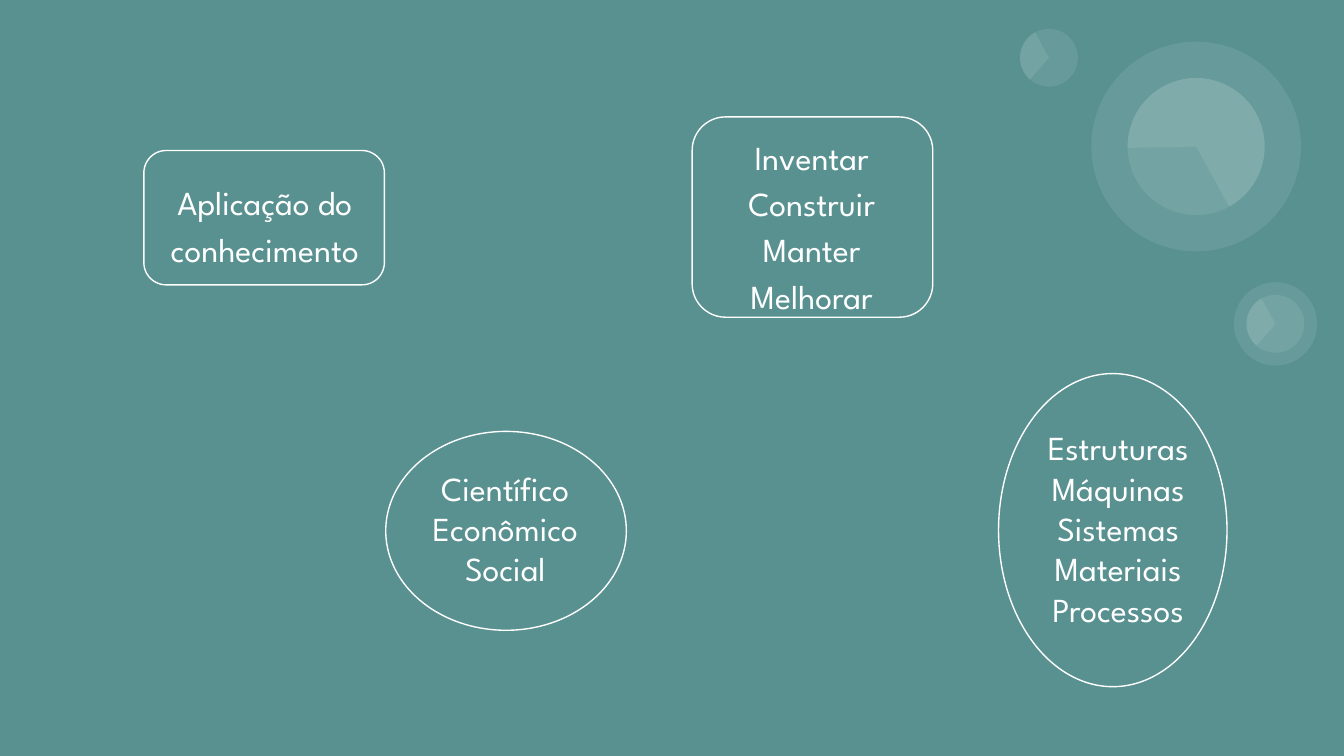
"""Build a slide of outlined word groups with translucent circles in the corner."""
from lxml import etree
from pptx import Presentation, util as u
from pptx.dml.color import RGBColor
from pptx.enum import shapes, text
from pptx.oxml.ns import qn

TEAL = RGBColor(0x59, 0x91, 0x91)
WHITE = RGBColor(0xFF, 0xFF, 0xFF)
FONT = "League Spartan"
CELL = u.Inches(0.1)
COLUMNS, ROWS = 100, 56.25
OVAL = shapes.MSO_SHAPE.OVAL
PIE = shapes.MSO_SHAPE.PIE
ROUNDED = shapes.MSO_SHAPE.ROUNDED_RECTANGLE

OUTLINES = [
    (OVAL, 74.3, 27.8, 17, 23.3),
    (ROUNDED, 51.5, 8.7, 17.9, 14.9),
    (OVAL, 28.7, 32.1, 17.9, 14.8),
    (ROUNDED, 10.7, 11.2, 17.9, 10),
]
WORD_GROUPS = [
    (8.3, 12.1, ["Aplicação do conhecimento"], {"line_spacing": 1.15, "space_after": 16}),
    (26.2, 33.8, ["Científico", "Econômico", "Social"], {}),
    (49, 8.7, ["Inventar", "Construir", "Manter", "Melhorar"], {"line_spacing": 1.15}),
    (71.8, 30.8, ["Estruturas Máquinas", "Sistemas", "Materiais", "Processos"], {}),
]
DIALS = [
    (89, 10.9, 10.2, 15.6, 215.9, (193.77, 123.14)),
    (94.9, 24.1, 4.3, 6.2, 35.8, (57, 123.14)),
    (78.05, 4.3, 4.3, None, 35.8, (57, 123.14)),
]


def grid(*cells):
    """Turn grid columns and rows into slide lengths."""
    return [round(cell * CELL) for cell in cells]


def add_outline(slide, kind, *box):
    """Add an unfilled shape with a thin white line."""
    shape = slide.shapes.add_shape(kind, *grid(*box))
    shape.shadow.inherit = False
    shape.fill.background()
    shape.line.color.rgb = WHITE
    shape.line.width = u.Pt(0.75)


def add_glow(slide, kind, x, y, diameter, rotation, angles=()):
    """Add a translucent white round shape centred on a grid point."""
    corner = x - diameter / 2, y - diameter / 2
    shape = slide.shapes.add_shape(kind, *grid(*corner, diameter, diameter))
    shape.shadow.inherit = False
    shape.rotation = rotation
    for index, angle in enumerate(angles):
        shape.adjustments[index] = angle
    shape.line.fill.background()
    shape.fill.solid()
    shape.fill.fore_color.rgb = WHITE
    color = shape.fill._xPr.find(".//" + qn("a:srgbClr"))
    etree.SubElement(color, qn("a:alpha"), val="9000")


def add_dial(slide, x, y, diameter, halo, rotation, angles):
    """Add a disc with a pie over it and an optional halo around it."""
    add_glow(slide, OVAL, x, y, diameter, rotation)
    add_glow(slide, PIE, x, y, diameter, rotation, angles)
    if halo:
        add_glow(slide, OVAL, x, y, halo, rotation)


def write(paragraph, words, size=18, line_spacing=1.0, space_after=0):
    """Write one centred paragraph without a bullet."""
    paragraph.text = words
    paragraph.alignment = text.PP_ALIGN.CENTER
    paragraph.line_spacing = line_spacing
    paragraph.space_before = u.Pt(0)
    paragraph.space_after = u.Pt(space_after)
    properties = paragraph._p.get_or_add_pPr()
    properties.set("marL", "0")
    properties.set("indent", "0")
    etree.SubElement(properties, qn("a:buNone"))
    font = paragraph.runs[0].font
    font.name, font.size, font.bold = FONT, u.Pt(size), False
    font.color.rgb = WHITE


def fill_body(placeholder, left, top, lines, style):
    """Move a body placeholder and fill it with lines of text."""
    box = grid(left, top, 22.8, 4.5)
    placeholder.left, placeholder.top, placeholder.width, placeholder.height = box
    frame = placeholder.text_frame
    frame.word_wrap = True
    frame.auto_size = text.MSO_AUTO_SIZE.NONE
    frame.vertical_anchor = text.MSO_ANCHOR.TOP
    frame.margin_left = frame.margin_right = CELL
    frame.margin_top = frame.margin_bottom = CELL
    for index, line in enumerate(lines):
        paragraph = frame.add_paragraph() if index else frame.paragraphs[0]
        write(paragraph, line, **style)


def main():
    """Build and save the presentation."""
    presentation = Presentation()
    presentation.slide_width, presentation.slide_height = grid(COLUMNS, ROWS)
    comparison = presentation.slide_layouts.get_by_name("Comparison")
    slide = presentation.slides.add_slide(comparison)
    slide.background.fill.solid()
    slide.background.fill.fore_color.rgb = TEAL
    title, *bodies = slide.placeholders
    title.element.getparent().remove(title.element)
    for dial in DIALS:
        add_dial(slide, *dial)
    for outline in OUTLINES:
        add_outline(slide, *outline)
    for body, group in zip(bodies, WORD_GROUPS):
        fill_body(body, *group)
    presentation.save("out.pptx")


if __name__ == "__main__":
    main()
